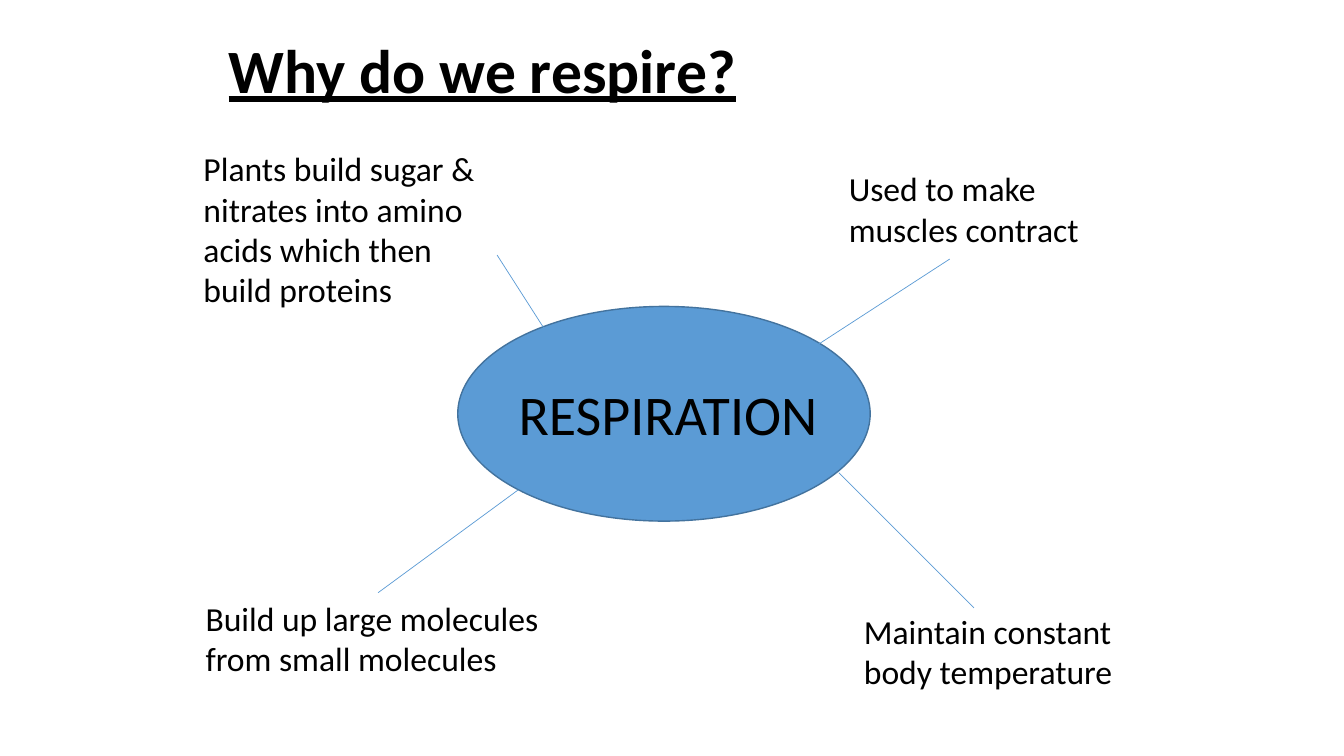
from dataclasses import dataclass

from lxml import etree
from pptx import Presentation, util as u
from pptx.dml.color import RGBColor
from pptx.enum import shapes, text
from pptx.oxml.ns import qn


@dataclass(frozen=True)
class Theme:
    font: str = "Calibri"
    ink: str = "000000"
    fill: str = "5B9BD5"
    edge: str = "43739E"
    title: int = 44
    hub: int = 40
    body: int = 24


class Deck:
    def __init__(self, theme):
        self.theme = theme
        self.prs = Presentation()
        self.prs.slide_width = u.Inches(13.33)
        self.prs.slide_height = u.Inches(7.5)
        self.s = self.prs.slides.add_slide(self.prs.slide_layouts[6])

    def line_style(self, line, color, width):
        line.color.rgb = RGBColor.from_string(color)
        line.width = u.Pt(width)

    def ellipse(self, box):
        sp = self.s.shapes.add_shape(shapes.MSO_SHAPE.OVAL, *map(u.Inches, box))
        sp.shadow.inherit = False
        sp.fill.solid()
        sp.fill.fore_color.rgb = RGBColor.from_string(self.theme.fill)
        self.line_style(sp.line, self.theme.edge, 1)

    def spoke(self, start, end):
        ln = self.s.shapes.add_connector(
            shapes.MSO_CONNECTOR.STRAIGHT, *map(u.Inches, start + end))
        self.line_style(ln.line, self.theme.fill, 0.5)
        etree.SubElement(ln._element.spPr, qn("a:effectLst"))

    def label(self, box, words, size, para=None, anchor=text.MSO_ANCHOR.TOP, **font):
        tf = self.s.shapes.add_textbox(*map(u.Inches, box)).text_frame
        tf.word_wrap = True
        tf.vertical_anchor = anchor
        p = tf.paragraphs[0]
        r = p.add_run()
        r.text = words
        r.font.color.rgb = RGBColor.from_string(self.theme.ink)
        font.update(name=self.theme.font, size=u.Pt(size))
        for target, values in ((p, para or {}), (r.font, font)):
            for key, value in values.items():
                setattr(target, key, value)


def main():
    theme = Theme()
    deck = Deck(theme)

    # Title
    deck.label((2.17, 0.3, 9, 0.85), "Why do we respire?", theme.title,
               {"line_spacing": 0.9}, text.MSO_ANCHOR.MIDDLE,
               bold=True, underline=True)

    # Central ellipse with its spokes
    deck.ellipse((4.54, 3.04, 4.09, 2.13))
    for start, end in (
        ((8.08, 3.44), (9.42, 2.57)),
        ((8.32, 4.69), (9.66, 6.03)),
        ((5.14, 4.86), (3.75, 5.88)),
        ((5.41, 3.28), (4.93, 2.53)),
    ):
        deck.spoke(start, end)
    deck.label((4.93, 3.72, 3.39, 0.77), "RESPIRATION", theme.hub,
               {"alignment": text.PP_ALIGN.CENTER})

    # Reasons around the ellipse
    for box, words in (
        ((1.92, 1.42, 3.2, 1.72),
         "Plants build sugar & nitrates into amino acids which then build proteins"),
        ((1.94, 5.88, 3.86, 0.91), "Build up large molecules from small molecules"),
        ((8.32, 1.62, 3.2, 0.91), "Used to make muscles contract"),
        ((8.47, 6.01, 3.2, 0.91), "Maintain constant body temperature"),
    ):
        deck.label(box, words, theme.body)

    deck.prs.save("out.pptx")


if __name__ == "__main__":
    main()
